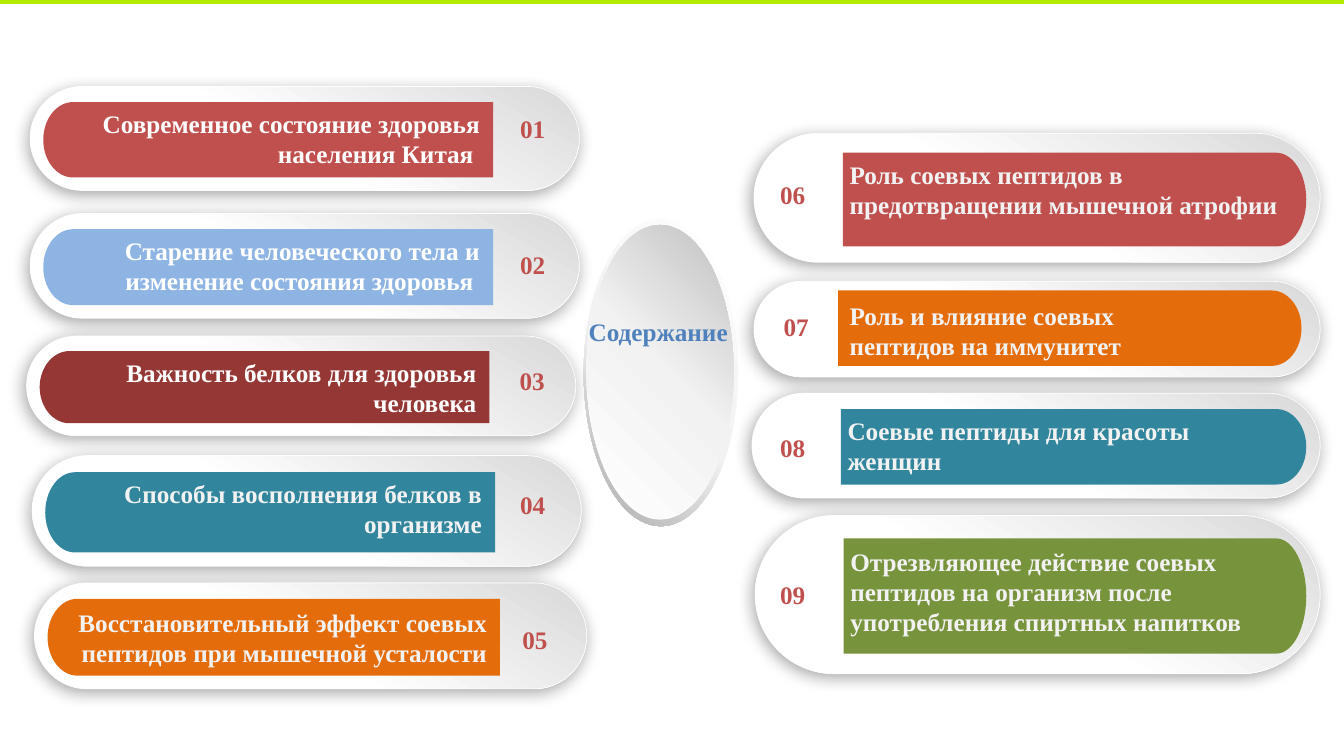
"""Builds the contents slide: nine numbered topics around a central oval."""
from dataclasses import dataclass

import pptx
import pptx.dml.color
import pptx.enum.shapes
import pptx.enum.text
import pptx.oxml.ns
import pptx.util
from lxml import etree

Cm = pptx.util.Cm
Pt = pptx.util.Pt
Shape = pptx.enum.shapes.MSO_SHAPE
Align = pptx.enum.text.PP_ALIGN
qn = pptx.oxml.ns.qn


@dataclass(frozen=True)
class Theme:
    font: str = "Times New Roman"
    size: int = 18
    white: str = "FFFFFF"
    pale: str = "F2F2F2"
    title: str = "4F81BD"
    bar: str = "B3E900"
    red: str = "C0504D"
    sky: str = "8EB4E3"
    wine: str = "953735"
    teal: str = "31859C"
    orange: str = "E46C0A"
    green: str = "77933C"
    shadow: str = "000000"
    pill: tuple = ((45, "FFFFFF"), (100, "D9D9D9"))
    ring: tuple = ((0, "FFFFFF"), (55, "F2F2F2"), (100, "A6A6A6"))
    oval: tuple = ((0, "FFFFFF"), (51, "F2F2F2"), (100, "BFBFBF"))


THEME = Theme()

LEFT_TOPICS = [
    ("01", "Современное состояние здоровья населения Китая ",
     THEME.red, THEME.white, (0.76, 2.18, 13.84, 2.62), (11.96, 2.72), 2.6),
    ("02", "Старение человеческого тела и изменение состояния здоровья ",
     THEME.sky, THEME.white, (0.76, 5.38, 13.84, 2.64), (11.96, 6.15), 5.81),
    ("03", "Важность белков для здоровья человека",
     THEME.wine, THEME.white, (0.67, 8.47, 13.84, 2.51), (11.95, 9.09), 8.88),
    ("04", "Способы восполнения белков в организме",
     THEME.teal, THEME.pale, (0.81, 11.48, 13.84, 2.79), (11.96, 12.2), 11.93),
    ("05", "Восстановительный эффект соевых пептидов при мышечной усталости",
     THEME.orange, THEME.pale, (0.87, 14.69, 13.92, 2.67), (12.02, 15.61), 15.18),
]

RIGHT_TOPICS = [
    ("06", "Роль соевых пептидов в предотвращении мышечной атрофии", THEME.red,
     (19, 3.36, 14.27, 3.25), (21.24, 3.85, 11.68, 2.36),
     (19.41, 4.39), (21.16, 3.89, 11.46)),
    ("07", "Роль и влияние соевых пептидов на иммунитет", THEME.orange,
     (19, 7.09, 14.27, 2.41), (21.12, 7.32, 11.68, 1.9),
     (19.5, 7.72), (21.16, 7.44, 9.12)),
    ("08", "Соевые пептиды для красоты женщин", THEME.teal,
     (18.95, 9.91, 14.32, 2.64), (21.19, 10.31, 11.73, 1.9),
     (19.41, 10.77), (21.11, 10.34, 11.5)),
    ("09", "Отрезвляющее действие соевых пептидов на организм после "
     "употребления спиртных напитков", THEME.green,
     (19.03, 12.99, 14.24, 3.99), (21.26, 13.57, 11.66, 2.9),
     (19.41, 14.48), (21.18, 13.64, 11.43)),
]


def write_text(frame, text, *, color, align=Align.LEFT):
    paragraph = frame.paragraphs[0]
    paragraph.alignment = align
    run = paragraph.add_run()
    run.text = text
    run.font.name = THEME.font
    run.font.size = Pt(THEME.size)
    run.font.bold = True
    run.font.color.rgb = pptx.dml.color.RGBColor.from_string(color)


def add_color(parent, color):
    return etree.SubElement(parent, qn("a:srgbClr"), val=color)


class SlideBuilder:
    def __init__(self, slide, theme):
        self.slide = slide
        self.theme = theme
        self.shapes = slide.shapes

    def start_group(self):
        self.shapes = self.slide.shapes.add_group_shape().shapes

    def flat(self, shape, color):
        shape.shadow.inherit = False
        shape.line.fill.background()
        shape.fill.solid()
        shape.fill.fore_color.rgb = pptx.dml.color.RGBColor.from_string(color)

    def bar(self, box, color):
        shape = self.shapes.add_shape(Shape.RECTANGLE, *map(Cm, box))
        self.flat(shape, color)

    def gradient(self, kind, box, stops, angle, adjustment=None):
        shape = self.shapes.add_shape(kind, *map(Cm, box))
        if adjustment is not None:
            shape.adjustments[0] = adjustment
        shape.shadow.inherit = False
        shape.line.fill.background()
        shape.fill.gradient()
        shape.fill.gradient_angle = 360 - angle
        stop_list = shape._element.spPr.find(".//" + qn("a:gsLst"))
        for stop in list(stop_list):
            stop_list.remove(stop)
        for position, color in stops:
            stop = etree.SubElement(stop_list, qn("a:gs"), pos=str(position * 1000))
            add_color(stop, color)
        return shape

    def pill(self, box):
        shape = self.gradient(Shape.ROUNDED_RECTANGLE, box, self.theme.pill, 300, 0.5)
        shape.line.color.rgb = pptx.dml.color.RGBColor.from_string(self.theme.white)
        shape.line.width = Pt(0.5)
        effects = shape._element.spPr.find(qn("a:effectLst"))
        shadow = etree.SubElement(
            effects, qn("a:outerShdw"), blurRad=str(Pt(12)), dist=str(Pt(3)),
            dir=str(135 * 60000), algn="tr", rotWithShape="0")
        color = add_color(shadow, self.theme.shadow)
        etree.SubElement(color, qn("a:alpha"), val="34000")

    def band(self, box, color, round_left):
        left, top, width, height = box
        radius, bulge = 0.75, 0.55
        flat, tip = (width, 0) if round_left else (0, width)
        start = radius if round_left else width - radius
        middle = height / 2
        across = start + (tip - start) * bulge
        upper, lower = middle * (1 - bulge), middle * (1 + bulge)
        corners = [(flat, 0), (start, 0), (tip, middle), (start, height), (flat, height)]
        points = [(Cm(left + x), Cm(top + y)) for x, y in corners]
        builder = self.shapes.build_freeform(*points[0])
        builder.add_line_segments(points[1:], close=True)
        shape = builder.convert_to_shape()
        self.flat(shape, color)
        segments = shape._element.spPr.findall(".//" + qn("a:lnTo"))
        curves = [[(across, 0), (tip, upper)], [(tip, lower), (across, height)]]
        for segment, controls in zip(segments[1:3], curves):
            segment.tag = qn("a:cubicBezTo")
            for index, (x, y) in enumerate(controls):
                point = etree.Element(qn("a:pt"), x=str(Cm(x)), y=str(Cm(y)))
                segment.insert(index, point)

    def text(self, box, text, inset=True, **style):
        frame = self.shapes.add_textbox(*map(Cm, box)).text_frame
        frame.word_wrap = True
        frame.auto_size = pptx.enum.text.MSO_AUTO_SIZE.SHAPE_TO_FIT_TEXT
        if not inset:
            frame.margin_left = frame.margin_right = Cm(0)
            frame.margin_top = frame.margin_bottom = Cm(0)
        write_text(frame, text, **style)

    def topic(self, number, caption, fill, color, pill, band, number_at,
              caption_at, on_left):
        align = Align.RIGHT if on_left else Align.LEFT
        self.start_group()
        self.pill(pill)
        self.band(band, fill, on_left)
        self.text((*number_at, 2.03, 1.02), number, color=self.theme.red, align=align)
        self.text((*caption_at, 1.8), caption, color=color, align=align)


def main():
    presentation = pptx.Presentation()
    presentation.slide_width = Cm(33.87)
    presentation.slide_height = Cm(19.05)
    slide = presentation.slides.add_slide(presentation.slide_layouts[6])
    builder = SlideBuilder(slide, THEME)

    builder.bar((0, 0, 33.87, 0.1), THEME.bar)
    builder.start_group()
    builder.gradient(Shape.DONUT, (14.71, 5.51, 3.89, 7.75), THEME.ring, 135, 0.049)
    builder.gradient(Shape.OVAL, (14.78, 5.67, 3.71, 7.42), THEME.oval, 315)
    builder.text((14.56, 7.98, 4.06, 0.76), "Содержание", inset=False,
                 color=THEME.title, align=Align.CENTER)

    for number, caption, fill, color, pill, number_at, caption_top in LEFT_TOPICS:
        left, top, width, height = pill
        band = (left + 0.33, top + 0.15 * height, 0.819 * width, 0.725 * height)
        caption_at = (left + 0.837 * width - 11.4, caption_top, 11.4)
        builder.topic(number, caption, fill, color, pill, band, number_at,
                      caption_at, on_left=True)
    for number, caption, fill, *places in RIGHT_TOPICS:
        builder.topic(number, caption, fill, THEME.pale, *places, on_left=False)

    presentation.save("out.pptx")


if __name__ == "__main__":
    main()
